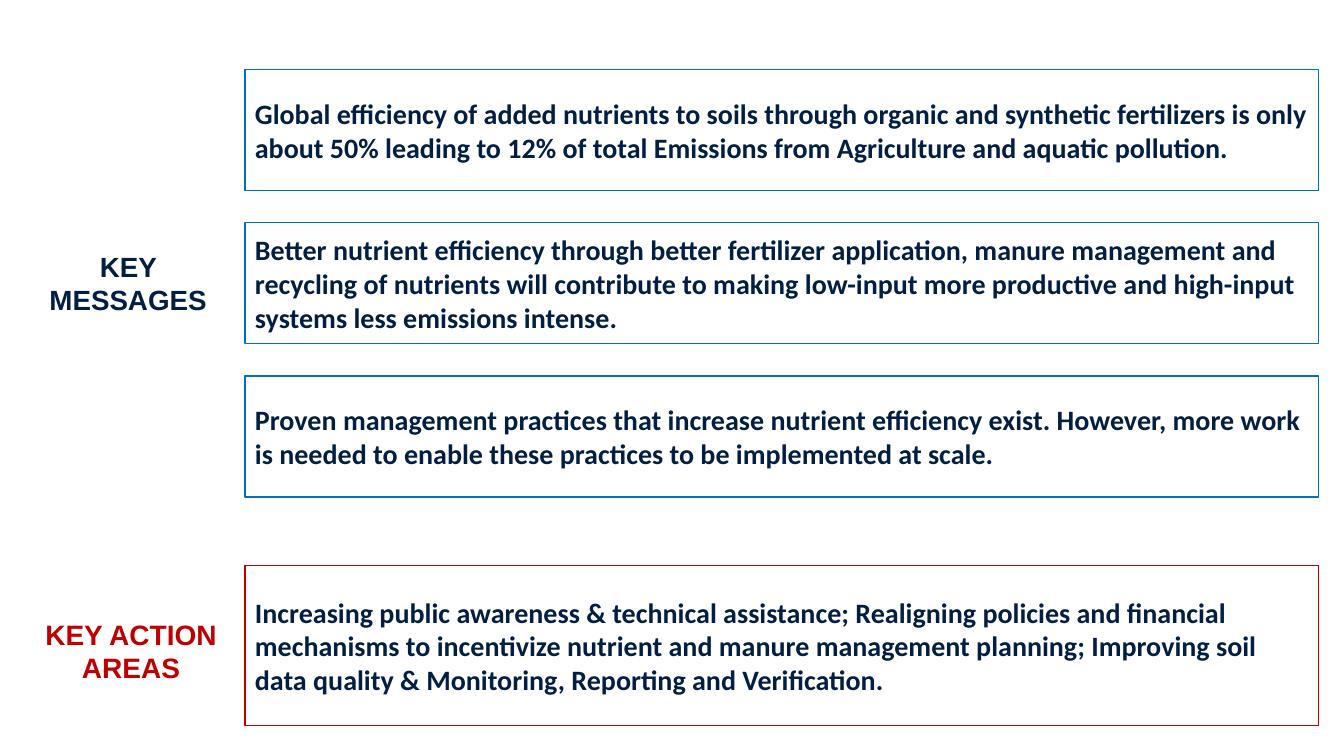
"""Build a slide of key messages and key action areas."""
from pptx import Presentation
from pptx.dml.color import RGBColor
from pptx.enum.shapes import MSO_SHAPE
from pptx.enum.text import MSO_ANCHOR, PP_ALIGN
from pptx.util import Inches, Pt

NAVY, BLUE, RED, WHITE = "021F43", "0070C0", "C00000", "FFFFFF"

MESSAGES = [
    "Global efficiency of added nutrients to soils through organic and "
    "synthetic fertilizers is only about 50% leading to 12% of total "
    "Emissions from Agriculture and aquatic pollution.",
    "Better nutrient efficiency through better fertilizer application, "
    "manure management and recycling of nutrients will contribute to making "
    "low-input more productive and high-input systems less emissions intense.",
    "Proven management practices that increase nutrient efficiency exist. "
    "However, more work is needed to enable these practices to be "
    "implemented at scale.",
]
ACTIONS = (
    "Increasing public awareness & technical assistance; Realigning policies "
    "and financial mechanisms to incentivize nutrient and manure management "
    "planning; Improving soil data quality & Monitoring, Reporting and "
    "Verification."
)
LABELS = [
    ("KEY MESSAGES", 0.22, 0.14, 5.33, 19.8, NAVY),
    ("KEY ACTION AREAS", 0.25, 5.67, 1.57, 20, RED),
]
LEFT, WIDTH = 2.43, 10.65
TOP, STEP, HIGH = 0.69, 1.52, 1.2


def paint(code):
    return RGBColor.from_string(code)


def write(frame, text, font="Calibri", size=20, color=NAVY,
          align=PP_ALIGN.LEFT, inset=None):
    frame.word_wrap = True
    frame.vertical_anchor = MSO_ANCHOR.MIDDLE
    if inset is not None:
        frame.margin_left = frame.margin_right = Inches(inset)
        frame.margin_top = frame.margin_bottom = Inches(inset)
    para = frame.paragraphs[0]
    para.alignment = align
    run = para.add_run()
    run.text = text
    run.font.name = font
    run.font.size = Pt(size)
    run.font.bold = True
    run.font.color.rgb = paint(color)


def panel(slide, text, top, high, edge):
    box = slide.shapes.add_shape(
        MSO_SHAPE.RECTANGLE, Inches(LEFT), Inches(top), Inches(WIDTH), Inches(high))
    box.shadow.inherit = False
    box.fill.solid()
    box.fill.fore_color.rgb = paint(WHITE)
    box.line.color.rgb = paint(edge)
    box.line.width = Pt(1)
    write(box.text_frame, text)


def main():
    deck = Presentation()
    deck.slide_width, deck.slide_height = Inches(13.33), Inches(7.5)
    slide = deck.slides.add_slide(deck.slide_layouts[6])
    for text, left, top, high, size, color in LABELS:
        box = slide.shapes.add_textbox(
            Inches(left), Inches(top), Inches(2.1), Inches(high))
        write(box.text_frame, text, font="Arial", size=size, color=color,
              align=PP_ALIGN.CENTER, inset=0)
    for row, text in enumerate(MESSAGES):
        panel(slide, text, TOP + row * STEP, HIGH, BLUE)
    panel(slide, ACTIONS, 5.61, 1.59, RED)
    deck.save("out.pptx")


if __name__ == "__main__":
    main()
